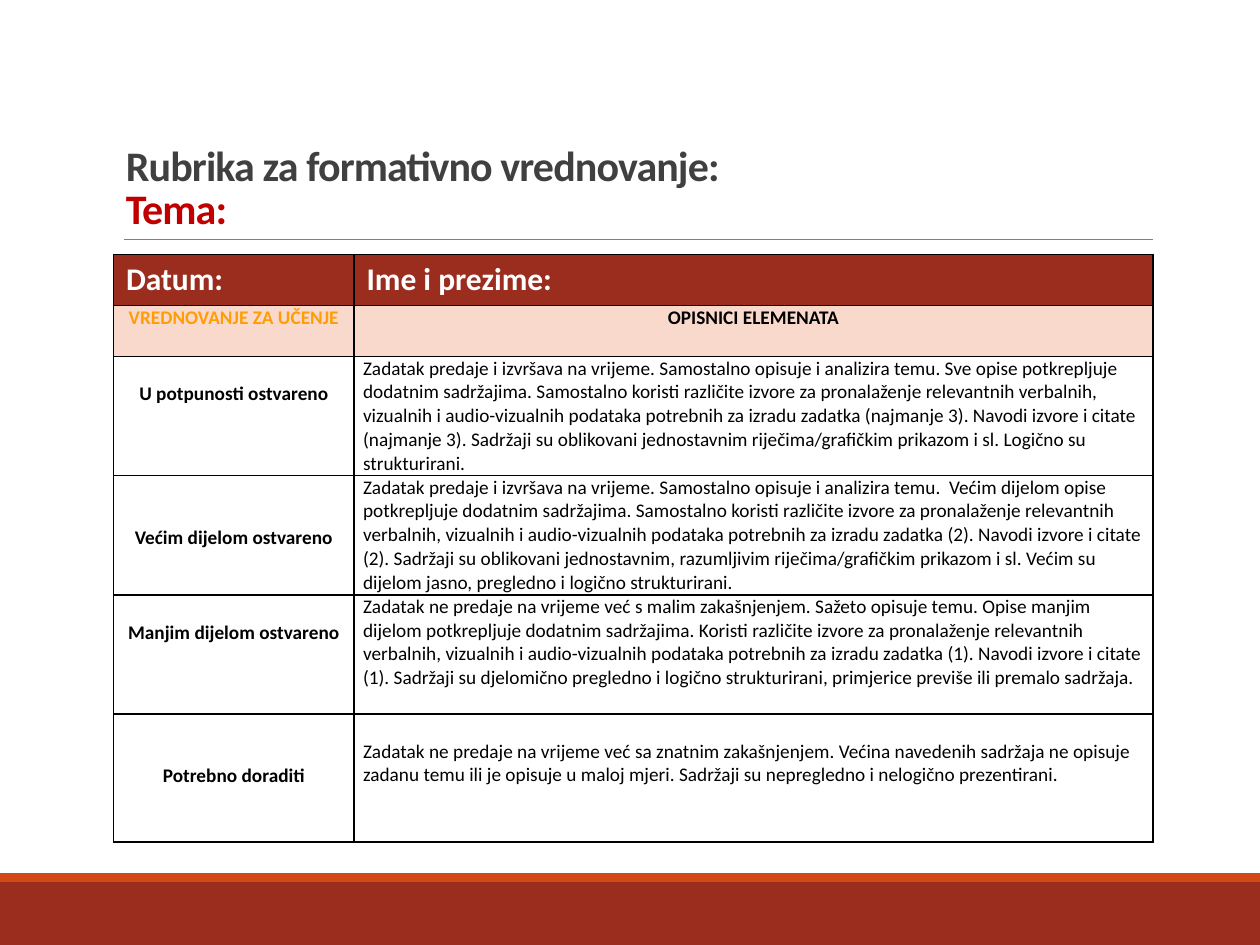
from dataclasses import dataclass
from typing import Optional

from lxml.etree import SubElement
from pptx import Presentation
from pptx.dml.color import RGBColor
from pptx.enum.shapes import MSO_CONNECTOR, MSO_SHAPE
from pptx.enum.text import MSO_ANCHOR, PP_ALIGN
from pptx.oxml.ns import qn
from pptx.util import Cm, Pt


@dataclass(frozen=True)
class Theme:
    font: str = "Calibri"
    brick: str = "9B2D1F"
    orange: str = "D34817"
    peach: str = "FAD9CD"
    amber: str = "FF9D05"
    title: str = "404040"
    topic: str = "C00000"
    rule: str = "808080"
    black: str = "000000"
    white: str = "FFFFFF"
    title_size: int = 24
    header_size: int = 18
    body_size: int = 11


THEME = Theme()


@dataclass(frozen=True)
class CellStyle:
    size: int = THEME.body_size
    color: str = THEME.black
    bold: bool = False
    fill: Optional[str] = None
    align: PP_ALIGN = PP_ALIGN.LEFT
    side: float = 0.18
    top: float = 0


@dataclass(frozen=True)
class Level:
    name: str
    description: str
    height: float = 2.4
    name_top: float = 0.52
    description_top: float = 0


@dataclass(frozen=True)
class Band:
    top: float
    height: float
    color: str


BANDS = [Band(17.78, 1.27, THEME.brick), Band(17.6, 0.18, THEME.orange)]
COLUMN_WIDTHS = [4.85, 16.1]
HEADING_HEIGHT = 1.03
LEVELS = [
    Level("U potpunosti ostvareno",
          "Zadatak predaje i izvršava na vrijeme. Samostalno opisuje i analizira temu. "
          "Sve opise potkrepljuje dodatnim sadržajima. Samostalno koristi različite izvore "
          "za pronalaženje relevantnih verbalnih, vizualnih i audio-vizualnih podataka "
          "potrebnih za izradu zadatka (najmanje 3). Navodi izvore i citate (najmanje 3). "
          "Sadržaji su oblikovani jednostavnim riječima/grafičkim prikazom i sl. "
          "Logično su strukturirani."),
    Level("Većim dijelom ostvareno",
          "Zadatak predaje i izvršava na vrijeme. Samostalno opisuje i analizira temu.  "
          "Većim dijelom opise potkrepljuje dodatnim sadržajima. Samostalno koristi "
          "različite izvore za pronalaženje relevantnih verbalnih, vizualnih i "
          "audio-vizualnih podataka potrebnih za izradu zadatka (2). Navodi izvore i "
          "citate (2). Sadržaji su oblikovani jednostavnim, razumljivim riječima/grafičkim "
          "prikazom i sl. Većim su dijelom jasno, pregledno i logično strukturirani.",
          name_top=1.02),
    Level("Manjim dijelom ostvareno",
          "Zadatak ne predaje na vrijeme već s malim zakašnjenjem. Sažeto opisuje temu. "
          "Opise manjim dijelom potkrepljuje dodatnim sadržajima. Koristi različite izvore "
          "za pronalaženje relevantnih verbalnih, vizualnih i audio-vizualnih podataka "
          "potrebnih za izradu zadatka (1). Navodi izvore i citate (1). Sadržaji su "
          "djelomično pregledno i logično strukturirani, primjerice previše ili premalo "
          "sadržaja."),
    Level("Potrebno doraditi",
          "Zadatak ne predaje na vrijeme već sa znatnim zakašnjenjem. Većina navedenih "
          "sadržaja ne opisuje zadanu temu ili je opisuje u maloj mjeri. Sadržaji su "
          "nepregledno i nelogično prezentirani.",
          height=2.58, name_top=1.02, description_top=0.52),
]


def set_attributes(target, values: dict) -> None:
    for name, value in values.items():
        setattr(target, name, value)


def add_run(paragraph, text: str, size: int, color: str, bold: bool):
    run = paragraph.add_run()
    run.text = text
    set_attributes(run.font, {"name": THEME.font, "size": Pt(size), "bold": bold})
    run.font.color.rgb = RGBColor.from_string(color)
    return run


def add_band(slide, band: Band, width: int) -> None:
    shape = slide.shapes.add_shape(
        MSO_SHAPE.RECTANGLE, 0, Cm(band.top), width, Cm(band.height))
    shape.shadow.inherit = False
    shape.fill.solid()
    shape.fill.fore_color.rgb = RGBColor.from_string(band.color)
    shape.line.fill.background()


def add_rule(slide) -> None:
    rule = slide.shapes.add_connector(
        MSO_CONNECTOR.STRAIGHT, Cm(2.49), Cm(4.83), Cm(23.24), Cm(4.83))
    rule.line.color.rgb = RGBColor.from_string(THEME.rule)
    rule.line.width = Pt(0.5)
    SubElement(rule._element.spPr, qn("a:effectLst"))


def add_title(slide) -> None:
    frame = slide.shapes.add_textbox(Cm(2.29), Cm(0.79), Cm(20.95), Cm(4.04)).text_frame
    set_attributes(frame, {"word_wrap": True, "vertical_anchor": MSO_ANCHOR.BOTTOM})
    paragraph = frame.paragraphs[0]
    paragraph.line_spacing = 0.85
    heading = add_run(paragraph, "Rubrika za formativno vrednovanje:",
                      THEME.title_size, THEME.title, True)
    paragraph.add_line_break()
    topic = add_run(paragraph, "Tema:", THEME.title_size, THEME.topic, True)
    for run in (heading, topic):
        run.font._element.set("spc", "-50")


def add_borders(cell) -> None:
    properties = cell._tc.get_or_add_tcPr()
    for position, side in enumerate(("lnL", "lnR", "lnT", "lnB")):
        line = properties.makeelement(qn(f"a:{side}"), {"w": str(Pt(1))})
        properties.insert(position, line)
        fill = SubElement(line, qn("a:solidFill"))
        SubElement(fill, qn("a:srgbClr"), val=THEME.black)


def fill_cell(cell, text: str, style: CellStyle) -> None:
    set_attributes(cell, {
        "margin_left": Cm(style.side), "margin_right": Cm(style.side),
        "margin_top": Cm(style.top), "margin_bottom": 0,
        "vertical_anchor": MSO_ANCHOR.TOP})
    if style.fill:
        cell.fill.solid()
        cell.fill.fore_color.rgb = RGBColor.from_string(style.fill)
    else:
        cell.fill.background()
    paragraph = cell.text_frame.paragraphs[0]
    paragraph.alignment = style.align
    add_run(paragraph, text, style.size, style.color, style.bold)
    add_borders(cell)


def add_rubric(slide) -> None:
    header = CellStyle(THEME.header_size, THEME.white, True, THEME.brick,
                       side=0.25, top=0.13)
    center = PP_ALIGN.CENTER
    rows = [
        (HEADING_HEIGHT, ("Datum:", header), ("Ime i prezime:", header)),
        (HEADING_HEIGHT,
         ("VREDNOVANJE ZA UČENJE",
          CellStyle(color=THEME.amber, bold=True, fill=THEME.peach, align=center)),
         ("OPISNICI ELEMENATA",
          CellStyle(bold=True, fill=THEME.peach, align=center))),
    ]
    rows += [
        (level.height,
         (level.name, CellStyle(bold=True, align=center, top=level.name_top)),
         (level.description, CellStyle(top=level.description_top)))
        for level in LEVELS
    ]
    table = slide.shapes.add_table(
        len(rows), len(COLUMN_WIDTHS), Cm(2.29), Cm(5.13),
        Cm(sum(COLUMN_WIDTHS)), Cm(sum(row[0] for row in rows))).table
    set_attributes(table, {"first_row": False, "horz_banding": False})
    for column, width in zip(table.columns, COLUMN_WIDTHS):
        column.width = Cm(width)
    for table_row, (height, *contents) in zip(table.rows, rows):
        table_row.height = Cm(height)
        for cell, (text, style) in zip(table_row.cells, contents):
            fill_cell(cell, text, style)


def main() -> None:
    presentation = Presentation()
    set_attributes(presentation, {"slide_width": Cm(25.4), "slide_height": Cm(19.05)})
    slide = presentation.slides.add_slide(presentation.slide_layouts[6])

    # Footer bands and rule under the title
    for band in BANDS:
        add_band(slide, band, presentation.slide_width)
    add_rule(slide)

    # Title and assessment rubric
    add_title(slide)
    add_rubric(slide)
    presentation.save("out.pptx")


if __name__ == "__main__":
    main()
